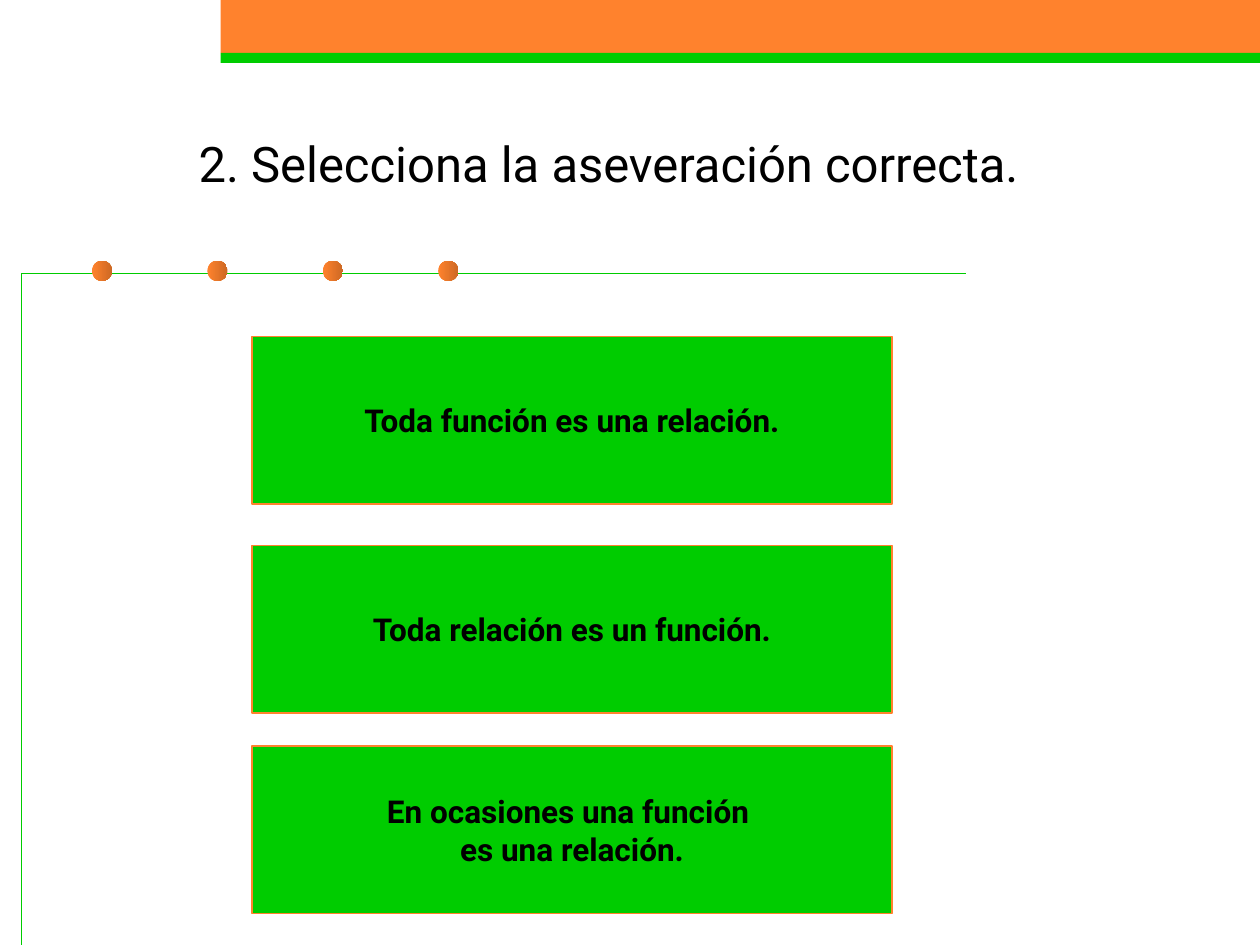
from pptx import Presentation
from pptx.dml.color import RGBColor
from pptx.enum.shapes import MSO_SHAPE
from pptx.enum.text import MSO_ANCHOR, PP_ALIGN
from pptx.util import Inches, Pt

RECTANGLE = MSO_SHAPE.RECTANGLE
OVAL = MSO_SHAPE.OVAL
BUTTON = MSO_SHAPE.ACTION_BUTTON_CUSTOM
MIDDLE = MSO_ANCHOR.MIDDLE
CENTER = PP_ALIGN.CENTER

FONT = "Roboto"
ORANGE, DARK_ORANGE, GREEN, BLACK = "FF822D", "CD6924", "00CC00", "000000"
TITLE = "2. Selecciona la aseveración correcta."
ANSWERS = [
    (2.67, ["Toda función es una relación."]),
    (4.33, ["Toda relación es un función."]),
    (5.92, ["En ocasiones una función ", "es una relación."]),
]


def color(hex_code):
    return RGBColor.from_string(hex_code)


def write(frame, lines, size, bold=False, wrap=True):
    frame.word_wrap = wrap
    frame.vertical_anchor = MIDDLE
    for index, line in enumerate(lines):
        paragraph = frame.paragraphs[0] if index == 0 else frame.add_paragraph()
        paragraph.alignment = CENTER
        run = paragraph.add_run()
        run.text = line
        run.font.name = FONT
        run.font.size = Pt(size)
        run.font.bold = bold
        run.font.color.rgb = color(BLACK)


def add_block(slide, preset, left, top, width, height, fill=None, line=None):
    block = slide.shapes.add_shape(
        preset, Inches(left), Inches(top), Inches(width), Inches(height))
    block.shadow.inherit = False
    if fill:
        block.fill.solid()
        block.fill.fore_color.rgb = color(fill)
    if line:
        block.line.color.rgb = color(line)
        block.line.width = Pt(1)
    else:
        block.line.fill.background()
    return block


def add_header(slide, left, top, width, height):
    stripe = 0.08
    band = height - stripe
    add_block(slide, RECTANGLE, left, top, width, band, ORANGE)
    add_block(slide, RECTANGLE, left, top + band, width, stripe, GREEN)


def add_frame(slide, left, top, width, height):
    # Green corner line
    builder = slide.shapes.build_freeform(Inches(left), Inches(top + height))
    builder.add_line_segments(
        [(Inches(left), Inches(top)), (Inches(left + width), Inches(top))],
        close=False)
    corner = builder.convert_to_shape()
    corner.shadow.inherit = False
    corner.fill.background()
    corner.line.color.rgb = color(GREEN)
    corner.line.width = Pt(0.75)

    # Evenly spaced beads on the line
    diameter, first, pitch = 0.16, 0.56, 0.916
    for index in range(4):
        bead = add_block(slide, OVAL, left + first + index * pitch,
                         top - 0.1, diameter, diameter)
        bead.fill.gradient()
        bead.fill.gradient_angle = 0
        for stop, shade in zip(bead.fill.gradient_stops, (ORANGE, DARK_ORANGE)):
            stop.color.rgb = color(shade)


def place_title(slide, left, top, width, height):
    title = slide.shapes.title
    title.left, title.top = Inches(left), Inches(top)
    title.width, title.height = Inches(width), Inches(height)
    write(title.text_frame, [TITLE], size=28)


def add_answers(slide, left, width, height):
    for top, lines in ANSWERS:
        button = add_block(slide, BUTTON, left, top, width, height, GREEN, ORANGE)
        write(button.text_frame, lines, size=18, bold=True, wrap=False)


def main():
    presentation = Presentation()
    presentation.slide_width = Inches(10)
    presentation.slide_height = Inches(7.5)
    slide = presentation.slides.add_slide(presentation.slide_layouts[5])
    add_header(slide, 1.75, 0, 8.25, 0.5)
    add_frame(slide, 0.17, 2.17, 7.5, 5.33)
    place_title(slide, 0.58, 0.67, 8.5, 1.25)
    add_answers(slide, 2, 5.08, 1.33)
    presentation.save("out.pptx")


if __name__ == "__main__":
    main()
